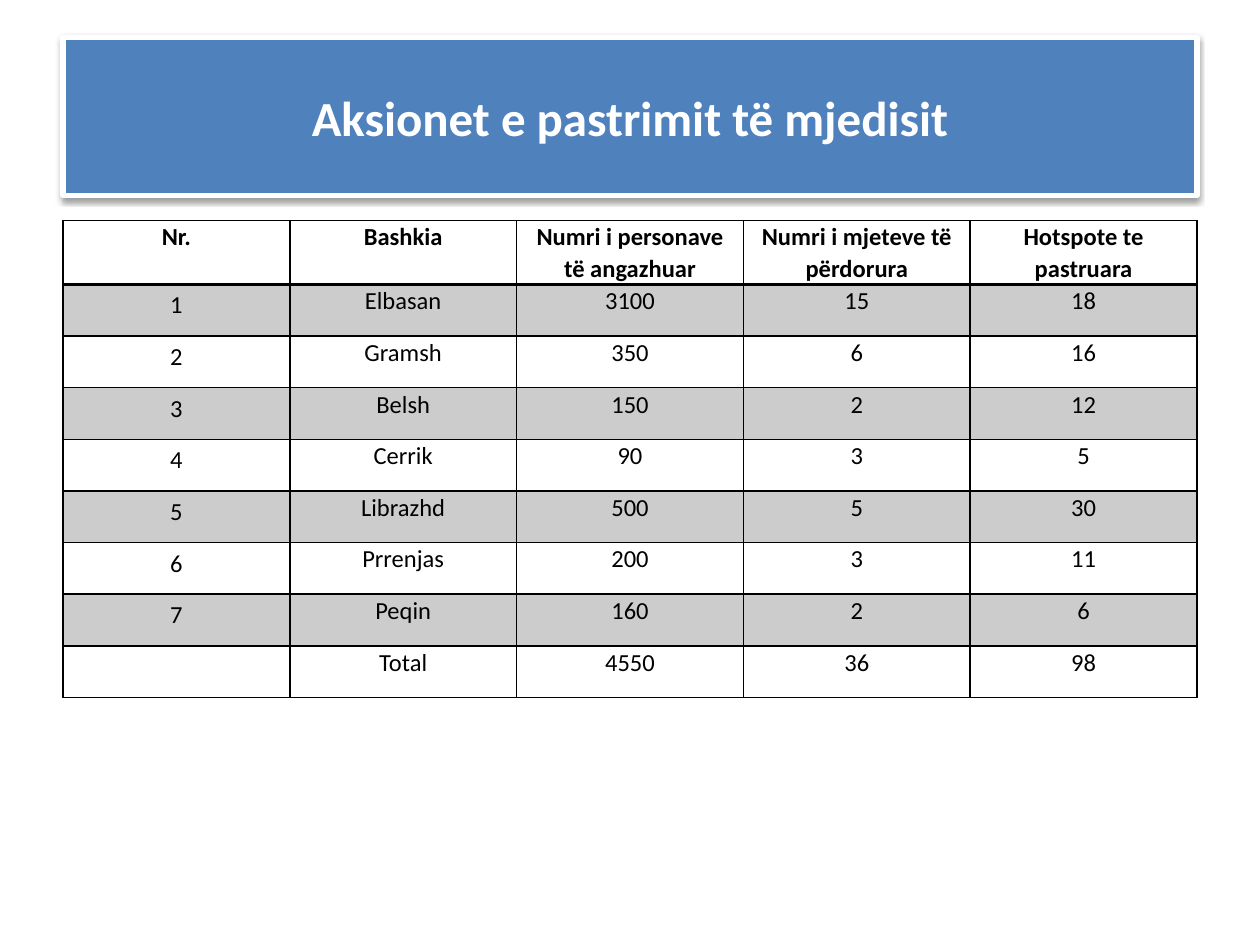
from lxml.etree import SubElement
from pptx import Presentation
from pptx.dml.color import RGBColor
from pptx.enum.text import MSO_ANCHOR, PP_ALIGN
from pptx.oxml import parse_xml
from pptx.oxml.ns import nsdecls, qn
from pptx.util import Inches, Pt

TITLE = "Aksionet e pastrimit të mjedisit"
ROWS = [
    ("Nr.", "Bashkia", "Numri i personave të angazhuar",
     "Numri i mjeteve të përdorura", "Hotspote te pastruara"),
    ("1", "Elbasan", "3100", "15", "18"),
    ("2", "Gramsh", "350", "6", "16"),
    ("3", "Belsh", "150", "2", "12"),
    ("4", "Cerrik", "90", "3", "5"),
    ("5", "Librazhd", "500", "5", "30"),
    ("6", "Prrenjas", "200", "3", "11"),
    ("7", "Peqin", "160", "2", "6"),
    ("", "Total", "4550", "36", "98"),
]
FONT = "Calibri"
BLUE = RGBColor(0x4F, 0x81, 0xBD)
WHITE = RGBColor(0xFF, 0xFF, 0xFF)
BLACK = RGBColor(0, 0, 0)
MARGIN, ROW_HEIGHT = 0.5, 0.41
BAND_OPACITY = 20


def format_text(paragraph, size, color, bold):
    paragraph.alignment = PP_ALIGN.CENTER
    for run in paragraph.runs:
        font = run.font
        font.name, font.size, font.bold = FONT, Pt(size), bold
        font.color.rgb = color


def add_title(slide, width):
    title = slide.shapes.title
    title.left, title.top = Inches(MARGIN), Inches(0.3)
    title.width, title.height = Inches(width), Inches(1.25)
    title.fill.solid()
    title.fill.fore_color.rgb = BLUE
    title.line.color.rgb = WHITE
    title.line.width = Pt(3)
    title._element.spPr.append(parse_xml(
        f'<a:effectLst {nsdecls("a")}>'
        f'<a:outerShdw blurRad="{Pt(3.1)}" dist="{Pt(1.6)}" dir="5400000" rotWithShape="0">'
        '<a:srgbClr val="000000"><a:alpha val="38000"/></a:srgbClr>'
        '</a:outerShdw></a:effectLst>'))
    frame = title.text_frame
    frame.text = TITLE
    frame.vertical_anchor = MSO_ANCHOR.MIDDLE
    format_text(frame.paragraphs[0], 28, WHITE, True)


def set_borders(cell, top, bottom):
    """Draw black cell borders; top and bottom are widths in points."""
    properties = cell._tc.get_or_add_tcPr()
    widths = {"lnL": 1, "lnR": 1, "lnT": top, "lnB": bottom}
    for position, (side, width) in enumerate(widths.items()):
        properties.insert(position, parse_xml(
            f'<a:{side} {nsdecls("a")} w="{Pt(width)}"><a:solidFill>'
            f'<a:srgbClr val="{BLACK}"/></a:solidFill></a:{side}>'))


def fill_cell(cell, banded):
    if not banded:
        cell.fill.background()
        return
    cell.fill.solid()
    cell.fill.fore_color.rgb = BLACK
    color = cell._tc.tcPr.find(qn("a:solidFill")).find(qn("a:srgbClr"))
    SubElement(color, qn("a:alpha")).set("val", str(BAND_OPACITY * 1000))


def add_table(slide, width):
    row_count, column_count = len(ROWS), len(ROWS[0])
    table = slide.shapes.add_table(
        row_count, column_count, Inches(MARGIN), Inches(1.75),
        Inches(width), Inches(ROW_HEIGHT * row_count)).table
    table.first_row = table.horz_banding = False
    for row_index, values in enumerate(ROWS):
        is_header = row_index == 0
        for column_index, value in enumerate(values):
            cell = table.cell(row_index, column_index)
            cell.text = value
            paragraph = cell.text_frame.paragraphs[0]
            format_text(paragraph, 14, BLACK, is_header)
            if is_header or column_index > 0:
                cell.margin_left = cell.margin_right = Inches(0.07)
                cell.margin_top = cell.margin_bottom = 0
                paragraph.line_spacing = 1.07
            fill_cell(cell, row_index % 2 == 1)
            set_borders(cell, top=2 if row_index == 1 else 1,
                        bottom=2 if is_header else 1)


def main():
    presentation = Presentation()
    presentation.slide_width, presentation.slide_height = Inches(10), Inches(7.5)
    slide = presentation.slides.add_slide(presentation.slide_layouts[5])
    width = 10 - 2 * MARGIN
    add_title(slide, width)
    add_table(slide, width)
    presentation.save("out.pptx")


if __name__ == "__main__":
    main()
